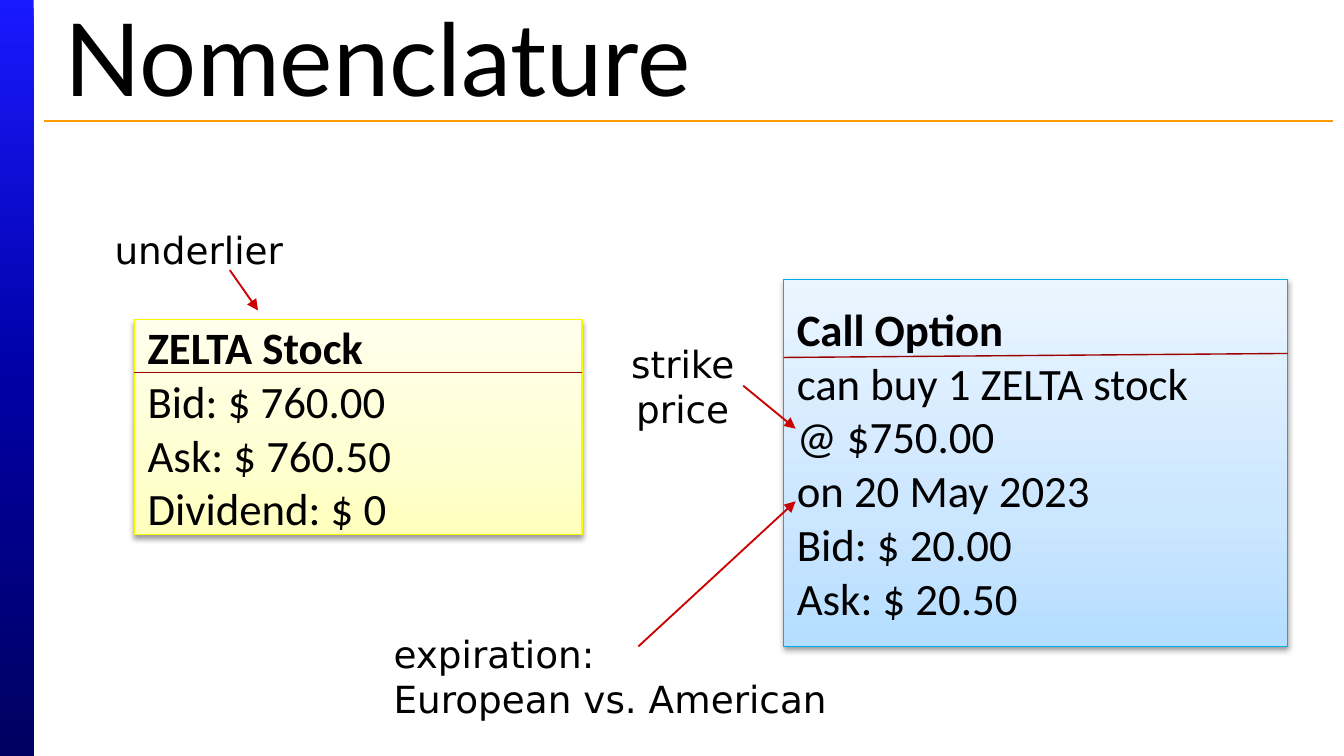
from copy import deepcopy

from lxml.etree import SubElement
from pptx import Presentation
from pptx.dml.color import RGBColor
from pptx.enum.shapes import MSO_CONNECTOR, MSO_SHAPE
from pptx.enum.text import MSO_ANCHOR, MSO_AUTO_SIZE, PP_ALIGN
from pptx.oxml.ns import qn
from pptx.util import Inches, Pt

BLACK = RGBColor(0x00, 0x00, 0x00)
ORANGE = RGBColor(0xFF, 0x99, 0x00)
RED = RGBColor(0xCC, 0x00, 0x00)
DARK_RED = RGBColor(0x9A, 0x00, 0x00)
YELLOW = RGBColor(0xF9, 0xF9, 0x00)
CYAN = RGBColor(0x00, 0xAC, 0xEB)
SIDEBAR_STOPS = [(0, RGBColor(0x19, 0x19, 0xFF)), (0.5, RGBColor(0x00, 0x00, 0xA5)),
                 (1, RGBColor(0x00, 0x00, 0x60))]
YELLOW_STOPS = [(0, RGBColor(0xFF, 0xFF, 0xBD)), (0.35, RGBColor(0xFF, 0xFF, 0xD1)),
                (1, RGBColor(0xFF, 0xFF, 0xEE))]
BLUE_STOPS = [(0, RGBColor(0xB5, 0xDD, 0xFF)), (0.35, RGBColor(0xCB, 0xE6, 0xFF)),
              (1, RGBColor(0xEB, 0xF5, 0xFF))]

SLIDE_WIDTH = 10
SLIDE_HEIGHT = SLIDE_WIDTH * 9 / 16

TITLE = "Nomenclature"
CARDS = [
    {"box": (1, 2.38, 3.33, 1.6), "stops": YELLOW_STOPS, "border": YELLOW,
     "heading": "ZELTA Stock", "rule_y": (2.77, 2.77),
     "details": ["Bid: $ 760.00\nAsk: $ 760.50", "Dividend: $ 0"]},
    {"box": (5.83, 2.08, 3.75, 2.73), "stops": BLUE_STOPS, "border": CYAN,
     "heading": "Call Option", "rule_y": (2.66, 2.63),
     "details": ["can buy 1 ZELTA stock\n@ $750.00", "on 20 May 2023",
                 "Bid: $ 20.00", "Ask: $ 20.50"]},
]
# text, box, alignment, wrap, arrow start, arrow end
LABELS = [
    ("underlier", (0.75, 1.64, 1.46, 0.44), PP_ALIGN.CENTER, False, (1.71, 2.01), (1.92, 2.31)),
    ("strike price", (4.54, 2.49, 1.08, 0.77), PP_ALIGN.CENTER, True, (5.53, 2.87), (5.92, 3.19)),
    ("expiration:\nEuropean vs. American", (2.83, 4.65, 3.43, 0.77), PP_ALIGN.LEFT, False,
     (4.75, 4.81), (5.92, 3.73)),
]


def inches(values):
    return [Inches(value) for value in values]


def write(paragraph, text, *, size, font, bold=False, align=PP_ALIGN.LEFT):
    paragraph.text = text
    paragraph.alignment = align
    for run in paragraph.runs:
        run.font.size = Pt(size)
        run.font.name = font
        run.font.bold = bold
        run.font.color.rgb = BLACK


def add_gradient_box(slide, box, stops, angle):
    """Add a rectangle with a three-stop gradient; angle is counter-clockwise."""
    panel = slide.shapes.add_shape(MSO_SHAPE.RECTANGLE, *inches(box))
    panel.shadow.inherit = False
    panel.line.fill.background()
    panel.fill.gradient()
    panel.fill.gradient_angle = angle
    stop_list = panel.element.spPr.find(qn("a:gradFill")).find(qn("a:gsLst"))
    stop_list.append(deepcopy(stop_list[-1]))
    for stop, (position, color) in zip(panel.fill.gradient_stops, stops):
        stop.position = position
        stop.color.rgb = color
    return panel


def add_drop_shadow(panel):
    effects = panel.element.spPr.find(qn("a:effectLst"))
    shadow = SubElement(effects, qn("a:outerShdw"), blurRad=str(Pt(3.1)), dist=str(Pt(1.6)),
                        dir="5400000", rotWithShape="0")
    color = SubElement(shadow, qn("a:srgbClr"), val="000000")
    SubElement(color, qn("a:alpha"), val="38000")


def add_line(slide, start, end, color, width, arrow=False):
    line = slide.shapes.add_connector(MSO_CONNECTOR.STRAIGHT, *inches(start + end))
    line.line.color.rgb = color
    line.line.width = Pt(width)
    properties = line.element.spPr
    if arrow:
        SubElement(properties.find(qn("a:ln")), qn("a:tailEnd"), type="triangle")
    SubElement(properties, qn("a:effectLst"))


def add_card(slide, card):
    left, _, width, _ = card["box"]
    panel = add_gradient_box(slide, card["box"], card["stops"], 90)
    panel.line.color.rgb = card["border"]
    panel.line.width = Pt(0.75)
    add_drop_shadow(panel)
    frame = panel.text_frame
    frame.word_wrap = True
    frame.vertical_anchor = MSO_ANCHOR.MIDDLE
    write(frame.paragraphs[0], card["heading"], size=24, font="Calibri", bold=True)
    for detail in card["details"]:
        write(frame.add_paragraph(), detail, size=24, font="Calibri")
    rule_start, rule_end = card["rule_y"]
    add_line(slide, (left, rule_start), (left + width, rule_end), DARK_RED, 0.75)


def add_label(slide, text, box, align, wrap, start, end):
    frame = slide.shapes.add_textbox(*inches(box)).text_frame
    frame.word_wrap = wrap
    frame.auto_size = MSO_AUTO_SIZE.SHAPE_TO_FIT_TEXT
    write(frame.paragraphs[0], text, size=20, font="DejaVu Sans", align=align)
    add_line(slide, start, end, RED, 1, arrow=True)


def main():
    presentation = Presentation()
    presentation.slide_width, presentation.slide_height = inches((SLIDE_WIDTH, SLIDE_HEIGHT))
    slide = presentation.slides.add_slide(presentation.slide_layouts[5])

    add_gradient_box(slide, (0, 0, 0.25, SLIDE_HEIGHT), SIDEBAR_STOPS, 270)
    add_line(slide, (0.33, 0.9), (9.92, 0.9), ORANGE, 0.75)

    title = slide.shapes.title
    title.left, title.top, title.width, title.height = inches((0.38, 0.15, 9.58, 0.53))
    title.text_frame.auto_size = MSO_AUTO_SIZE.NONE
    title.text_frame.vertical_anchor = MSO_ANCHOR.MIDDLE
    write(title.text_frame.paragraphs[0], TITLE, size=54, font="Lato")

    for card in CARDS:
        add_card(slide, card)
    for label in LABELS:
        add_label(slide, *label)
    presentation.save("out.pptx")


if __name__ == "__main__":
    main()
